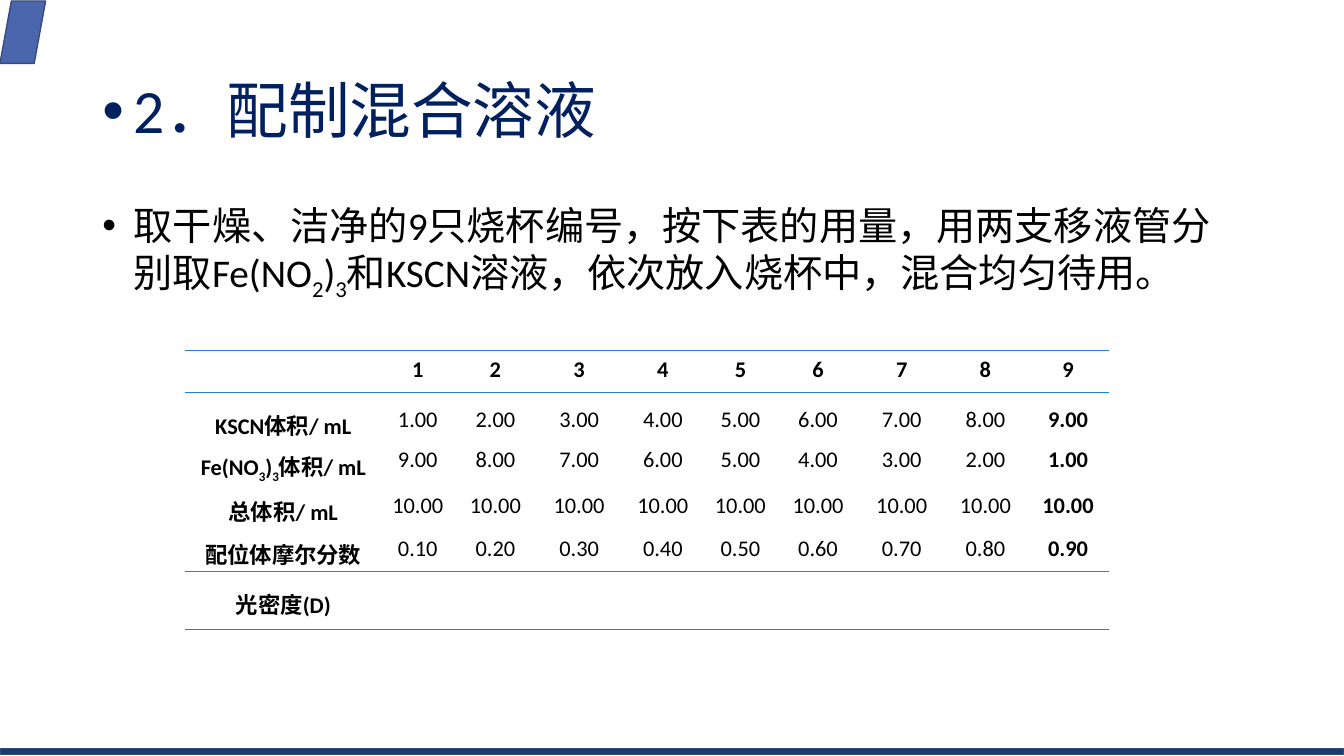
from lxml import etree
from pptx import Presentation
from pptx.dml.color import RGBColor
from pptx.enum import shapes, text
from pptx.oxml.ns import qn
from pptx.util import Pt

TITLE = "2．配制混合溶液"
BODY = ("取干燥、洁净的9只烧杯编号，按下表的用量，用两支移液管分别取"
        "Fe(NO|2|)|3|和KSCN溶液，依次放入烧杯中，混合均匀待用。")
BEAKERS = range(1, 10)
ROWS = [
    [""] + [str(n) for n in BEAKERS],
    ["KSCN体积/ mL"] + [f"{n:.2f}" for n in BEAKERS],
    ["Fe(NO|3|)|3|体积/ mL"] + [f"{10 - n:.2f}" for n in BEAKERS],
    ["总体积/ mL"] + ["10.00"] * 9,
    ["配位体摩尔分数"] + [f"{n / 10:.2f}" for n in BEAKERS],
    ["光密度(D)"] + [""] * 9,
]
COL_WIDTHS = [141.1, 51.1, 59.8, 59.8, 59.8, 51.1, 59.8, 59.8, 59.8, 58.3]
ROW_HEIGHTS = [29.5, 26.6, 32.4, 31, 35.3, 41.8]
RULED_ROWS = (0, len(ROWS) - 1)
COLORS = {"navy": "002060", "black": "000000", "rule": "297FD5",
          "band": "143F6A", "corner": "4A66AC", "outline": "374B7F"}
NO_STYLE = "{2D5ABB26-0587-4C30-8999-92F81FD0307C}"


def write(tf, content, size, color="black", bold=False, spacing=0.9,
          align=None, bullet=False):
    p = tf.paragraphs[0]
    if bullet:
        pPr = p._p.get_or_add_pPr()
        pPr.set("marL", str(Pt(22.5)))
        pPr.set("indent", str(-Pt(22.5)))
        etree.SubElement(pPr, qn("a:buFont")).set("typeface", "Arial")
        etree.SubElement(pPr, qn("a:buChar")).set("char", "•")
    p.line_spacing = spacing
    p.alignment = align
    for i, part in enumerate(content.split("|")):
        r = p.add_run()
        r.text = part
        r.font.name = "Calibri"
        r.font.size = Pt(size)
        r.font.bold = bold
        r.font.color.rgb = RGBColor.from_string(COLORS[color])
        if i % 2:
            r.font._element.set("baseline", "-25000")


def add_decoration(s, kind, left, top, width, height, fill):
    sp = s.shapes.add_shape(kind, Pt(left), Pt(top), Pt(width), Pt(height))
    sp.shadow.inherit = False
    sp.fill.solid()
    sp.fill.fore_color.rgb = RGBColor.from_string(COLORS[fill])
    sp.line.color.rgb = RGBColor.from_string(COLORS["outline"])
    sp.line.width = Pt(1)


def add_bullet_text(s, content, top, height, anchor, **fmt):
    tf = s.shapes.add_textbox(Pt(66), Pt(top), Pt(828), Pt(height)).text_frame
    tf.word_wrap = True
    tf.vertical_anchor = anchor
    write(tf, content, bullet=True, **fmt)


def rule_cell(cell):
    tcPr = cell._tc.get_or_add_tcPr()
    for i, side in enumerate(("lnT", "lnB")):
        ln = etree.Element(qn(f"a:{side}"), w=str(Pt(1)))
        fill = etree.SubElement(ln, qn("a:solidFill"))
        etree.SubElement(fill, qn("a:srgbClr")).set("val", COLORS["rule"])
        tcPr.insert(i, ln)


def add_volumes_table(s):
    frame = s.shapes.add_table(len(ROWS), len(COL_WIDTHS), Pt(131.8), Pt(250.6),
                               Pt(sum(COL_WIDTHS)), Pt(sum(ROW_HEIGHTS)))
    frame.element.find(".//" + qn("a:tableStyleId")).text = NO_STYLE
    table = frame.table
    table.first_row = table.horz_banding = False
    for col, width in zip(table.columns, COL_WIDTHS):
        col.width = Pt(width)
    for i, (row, height) in enumerate(zip(ROWS, ROW_HEIGHTS)):
        table.rows[i].height = Pt(height)
        for j, value in enumerate(row):
            cell = table.cell(i, j)
            cell.margin_left = cell.margin_right = Pt(5)
            cell.margin_top = cell.margin_bottom = 0
            cell.fill.background()
            if i in RULED_ROWS:
                rule_cell(cell)
            if value:
                write(cell.text_frame, value, 16,
                      bold=i == 0 or j in (0, len(row) - 1),
                      spacing=1.5 if i else 1.2, align=text.PP_ALIGN.CENTER)


def main():
    prs = Presentation()
    prs.slide_width, prs.slide_height = Pt(960), Pt(540)
    s = prs.slides.add_slide(prs.slide_layouts[6])
    add_decoration(s, shapes.MSO_SHAPE.RECTANGLE, 0, 534.6, 960, 4.4, "band")
    add_decoration(s, shapes.MSO_SHAPE.PARALLELOGRAM, 0, 0.7, 32.6, 44.6, "corner")
    add_bullet_text(s, BODY, 144, 342.7, text.MSO_ANCHOR.TOP, size=28)
    add_bullet_text(s, TITLE, 53.3, 55.4, text.MSO_ANCHOR.MIDDLE,
                    size=44, color="navy")
    add_volumes_table(s)
    prs.save("out.pptx")


if __name__ == "__main__":
    main()
